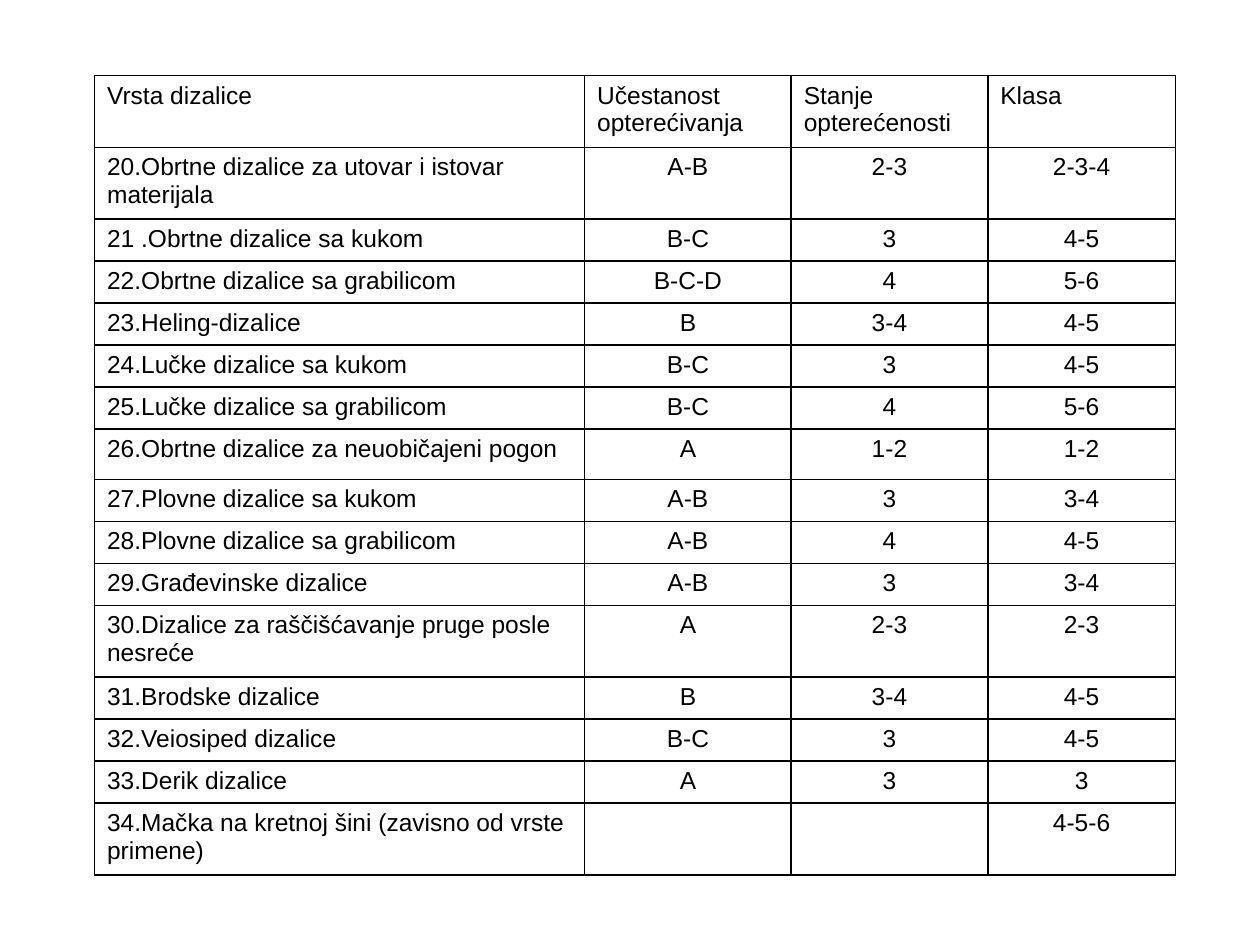
from dataclasses import dataclass

from lxml.etree import SubElement
from pptx import Presentation
from pptx.dml.color import RGBColor
from pptx.enum.text import PP_ALIGN as Align
from pptx.oxml.ns import qn
from pptx.util import Inches, Pt


@dataclass(frozen=True)
class Theme:
    font: str = "Arial"
    text_size: int = 14
    ink: str = "000000"
    paper: str = "FFFFFF"
    border_width: int = 1


THEME = Theme()
LEFT, TOP = 0.75, 0.6
COLUMN_WIDTHS = [3.89, 1.64, 1.56, 1.49]
ONE_LINE, LOOSE_LINE, TWO_LINES = 1 / 3, 0.4, 0.57

HEADER = ("Vrsta dizalice", "Učestanost opterećivanja", "Stanje opterećenosti", "Klasa")
CRANES = [
    ("20.Obrtne dizalice za utovar i istovar materijala", "A-B", "2-3", "2-3-4"),
    ("21 .Obrtne dizalice sa kukom", "B-C", "3", "4-5"),
    ("22.Obrtne dizalice sa grabilicom", "B-C-D", "4", "5-6"),
    ("23.Heling-dizalice", "B", "3-4", "4-5"),
    ("24.Lučke dizalice sa kukom", "B-C", "3", "4-5"),
    ("25.Lučke dizalice sa grabilicom", "B-C", "4", "5-6"),
    ("26.Obrtne dizalice za neuobičajeni pogon", "A", "1-2", "1-2"),
    ("27.Plovne dizalice sa kukom", "A-B", "3", "3-4"),
    ("28.Plovne dizalice sa grabilicom", "A-B", "4", "4-5"),
    ("29.Građevinske dizalice", "A-B", "3", "3-4"),
    ("30.Dizalice za raščišćavanje pruge posle nesreće", "A", "2-3", "2-3"),
    ("31.Brodske dizalice", "B", "3-4", "4-5"),
    ("32.Veiosiped dizalice", "B-C", "3", "4-5"),
    ("33.Derik dizalice", "A", "3", "3"),
    ("34.Mačka na kretnoj šini (zavisno od vrste primene)", "", "", "4-5-6"),
]
ROW_HEIGHTS = (
    [TWO_LINES] * 2 + [ONE_LINE] * 5 + [LOOSE_LINE] + [ONE_LINE] * 3
    + [TWO_LINES] + [ONE_LINE] * 3 + [TWO_LINES]
)


def add_borders(cell):
    properties = cell._tc.get_or_add_tcPr()
    for position, side in enumerate(("a:lnL", "a:lnR", "a:lnT", "a:lnB")):
        line = SubElement(properties, qn(side), w=str(Pt(THEME.border_width)))
        fill = SubElement(line, qn("a:solidFill"))
        SubElement(fill, qn("a:srgbClr"), val=THEME.ink)
        properties.remove(line)
        properties.insert(position, line)


def fill_cell(cell, text, align):
    cell.fill.solid()
    cell.fill.fore_color.rgb = RGBColor.from_string(THEME.paper)
    add_borders(cell)
    para = cell.text_frame.paragraphs[0]
    para.alignment = align
    para.font.size = Pt(THEME.text_size)
    if text:
        span = para.add_run()
        span.text = text
        span.font.name = THEME.font
        span.font.size = Pt(THEME.text_size)
        span.font.bold = False
        span.font.color.rgb = RGBColor.from_string(THEME.ink)


def add_crane_table(page):
    records = [HEADER, *CRANES]
    frame = page.shapes.add_table(
        len(records), len(HEADER), Inches(LEFT), Inches(TOP),
        Inches(sum(COLUMN_WIDTHS)), Inches(sum(ROW_HEIGHTS)),
    )
    table = frame.table
    table.horz_banding = False
    for column, width in zip(table.columns, COLUMN_WIDTHS):
        column.width = Inches(width)
    for row, height in zip(table.rows, ROW_HEIGHTS):
        row.height = Inches(height)
    for row_index, record in enumerate(records):
        for column_index, text in enumerate(record):
            centred = row_index > 0 and column_index > 0
            align = Align.CENTER if centred else Align.LEFT
            fill_cell(table.cell(row_index, column_index), text, align)


def main():
    deck = Presentation()
    deck.slide_width, deck.slide_height = Inches(10), Inches(7.5)
    page = deck.slides.add_slide(deck.slide_layouts[6])
    add_crane_table(page)
    deck.save("out.pptx")


if __name__ == "__main__":
    main()
